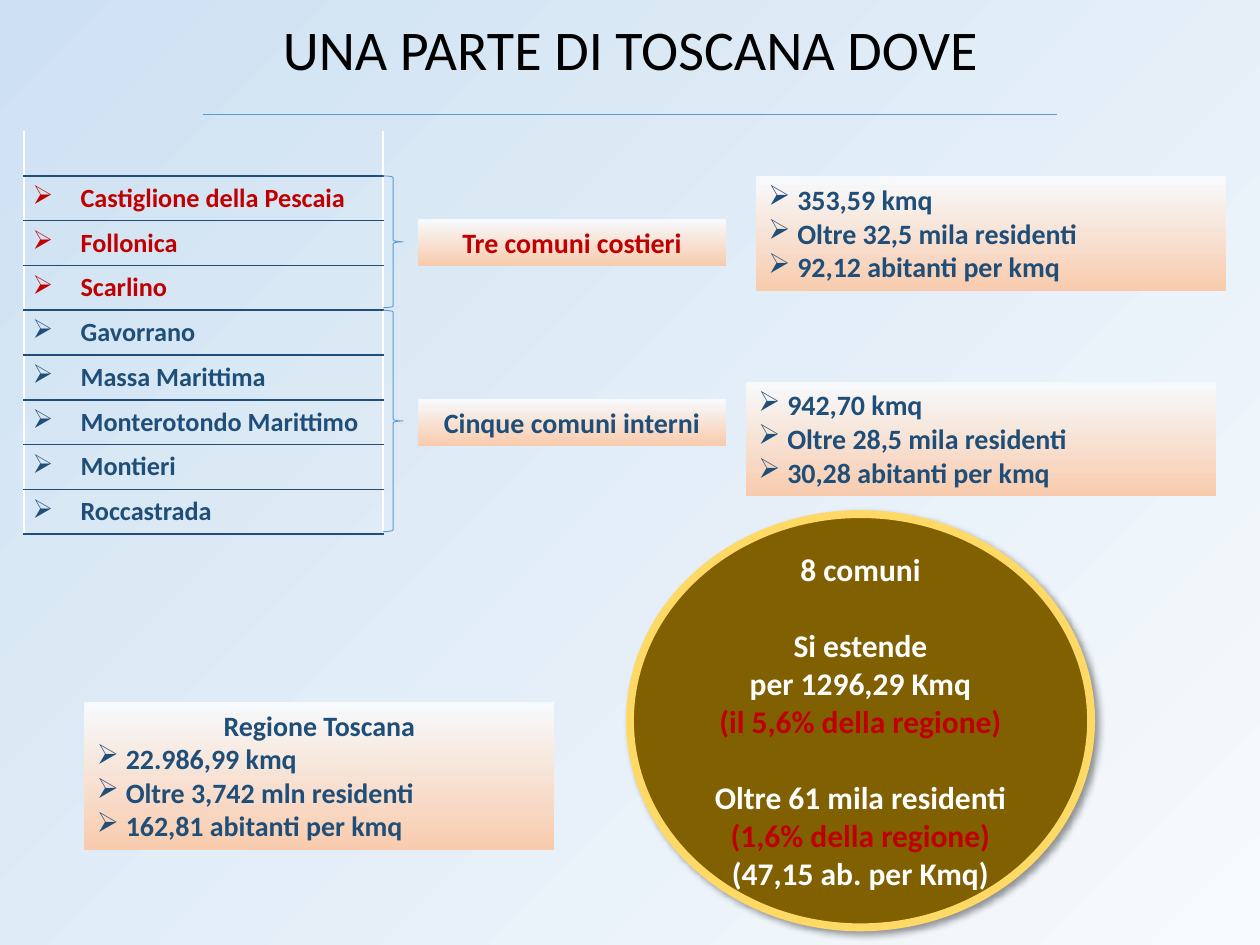
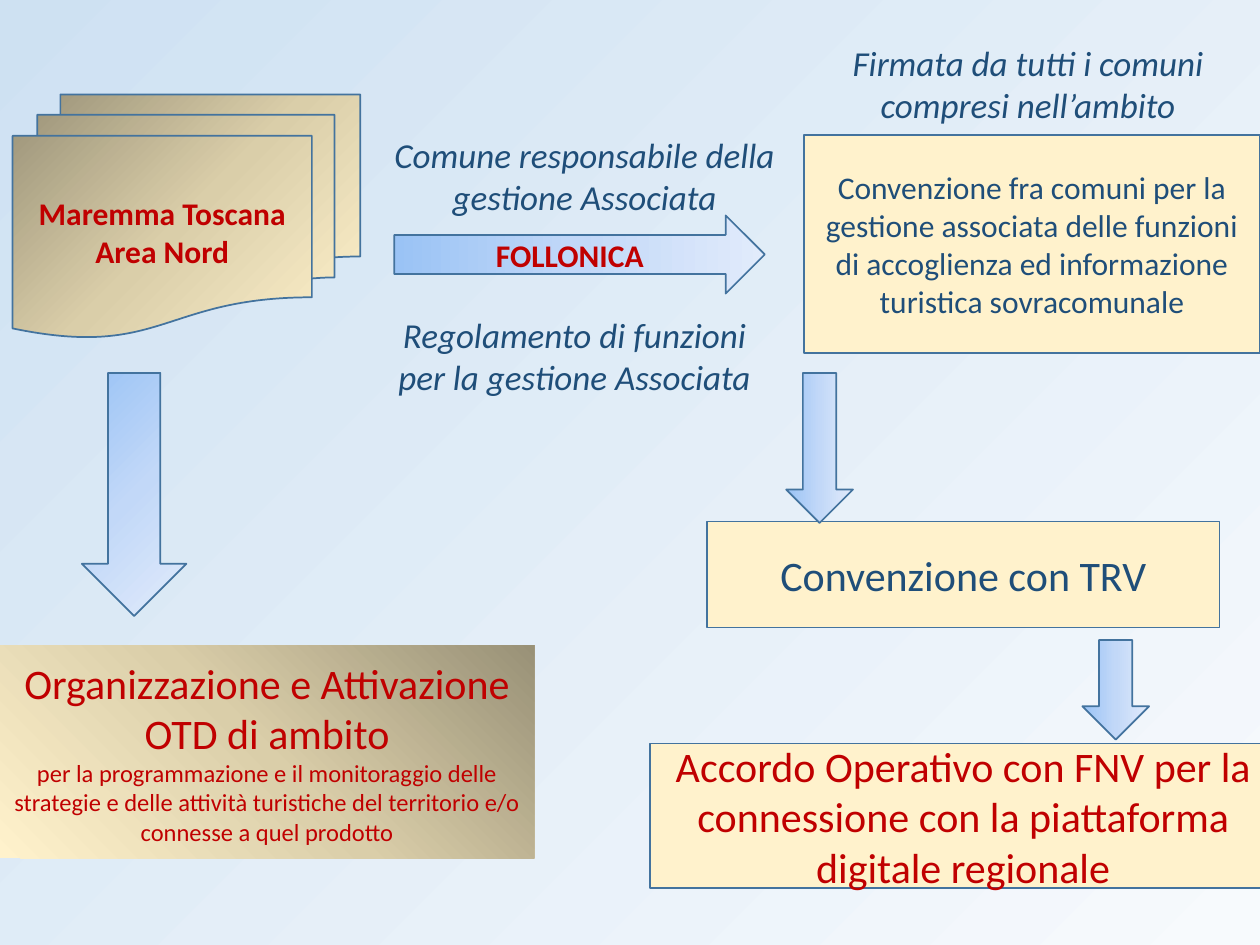
from copy import deepcopy
from dataclasses import dataclass

from lxml.etree import SubElement as Sub
from pptx import Presentation
from pptx.dml.color import RGBColor as Rgb
from pptx.enum.shapes import MSO_CONNECTOR as Link, MSO_SHAPE as Kind
from pptx.enum.text import MSO_ANCHOR as Anchor, MSO_AUTO_SIZE as Fit, PP_ALIGN as Align
from pptx.oxml.ns import qn
from pptx.util import Inches, Pt

HUES = {
    "pale": "F7FAFD", "sky": "CEE1F2", "navy": "1F4E79", "red": "C00000",
    "white": "FFFFFF", "black": "000000", "blue": "5B9BD5", "edge": "43739E",
    "peach": "F8CBAD", "cream": "FFF2CC", "sand": "DACEA9", "khaki": "999177",
    "ice": "9AC3F5", "mist": "C2D8F8", "frost": "E1EBFB",
    "olive": "806000", "gold": "FFD966",
}
FONT = "Calibri"
MARK = "➢"


@dataclass(frozen=True)
class Para:
    text: str
    size: float
    hue: str = "navy"
    bold: bool = False
    slant: bool = False
    dent: float = 0
    gap: float = 0
    pitch: float = 1


@dataclass(frozen=True)
class Blend:
    hues: tuple[str, ...]
    turn: float = 0
    focus: str = ""


@dataclass(frozen=True)
class Box:
    kind: Kind
    at: tuple[float, float, float, float]
    paras: tuple[Para, ...] = ()
    fill: str | Blend | None = None
    line: str | None = None
    width: float = 1
    grow: bool = False
    tight: bool = False
    shade: bool = False


PEACH = Blend(("pale", "peach"), 270)
ICE = Blend(("ice", "mist", "frost"))
ICE_ROUND = Blend(ICE.hues, focus="lb")
EARTH = Blend(("khaki", "sand", "cream"), focus="rb")
EARTH_TOP = Blend(EARTH.hues, focus="lb")


def tint(name: str) -> Rgb:
    return Rgb.from_string(HUES[name])


def blend(fill, root, mix: Blend) -> None:
    fill.gradient()
    fill.gradient_angle = mix.turn
    stops = root.find(".//" + qn("a:gsLst"))
    if len(mix.hues) == 3:
        stop = deepcopy(stops[0])
        stop.set("pos", "50000")
        stops.insert(1, stop)
    for stop, hue in zip(fill.gradient_stops, mix.hues):
        stop.color.rgb = tint(hue)
    if mix.focus:
        grad = stops.getparent()
        grad.remove(grad.find(qn("a:lin")))
        path = Sub(grad, qn("a:path"), path="circle")
        rect = Sub(path, qn("a:fillToRect"))
        for side in "ltrb":
            rect.set(side, "100000" if side in FOCI[mix.focus] else "0")


FOCI = {"lb": "rb", "rb": "lb"}


def write(frame, paras: tuple[Para, ...]) -> None:
    for spot, item in enumerate(paras):
        para = frame.add_paragraph() if spot else frame.paragraphs[0]
        para.text = item.text
        para.alignment = Align.LEFT if item.dent else Align.CENTER
        if item.pitch != 1:
            para.line_spacing = item.pitch
        if item.gap:
            para.space_before = Pt(item.gap)
        if item.dent:
            props = para._p.get_or_add_pPr()
            props.set("marL", str(Inches(item.dent)))
            props.set("indent", str(-Inches(item.dent)))
            Sub(props, qn("a:buChar"), char=MARK)
        font = para.font
        font.name, font.size = FONT, Pt(item.size)
        font.bold, font.italic = item.bold, item.slant
        font.color.rgb = tint(item.hue)


def trim(pad) -> None:
    pad.margin_left = pad.margin_right = Inches(0.07)
    pad.margin_top = pad.margin_bottom = Inches(0.04)


def draw(slide, box: Box) -> None:
    shape = slide.shapes.add_shape(box.kind, *map(Inches, box.at))
    shape.shadow.inherit = False
    if isinstance(box.fill, Blend):
        blend(shape.fill, shape.element.spPr, box.fill)
    elif box.fill:
        shape.fill.solid()
        shape.fill.fore_color.rgb = tint(box.fill)
    else:
        shape.fill.background()
    if box.line:
        shape.line.color.rgb = tint(box.line)
        shape.line.width = Pt(box.width)
    else:
        shape.line.fill.background()
    if box.shade:
        glow = Sub(shape.element.spPr.find(qn("a:effectLst")), qn("a:outerShdw"),
                   blurRad=str(Pt(4)), dist=str(Pt(3)), dir="2700000")
        color = Sub(glow, qn("a:srgbClr"), val=HUES["black"])
        Sub(color, qn("a:alpha"), val="40000")
    if box.paras:
        frame = shape.text_frame
        frame.word_wrap = True
        frame.vertical_anchor = Anchor.TOP if box.grow else Anchor.MIDDLE
        if box.grow:
            frame.auto_size = Fit.SHAPE_TO_FIT_TEXT
        if box.tight:
            trim(frame)
        write(frame, box.paras)


def start(deck):
    slide = deck.slides.add_slide(deck.slide_layouts[6])
    blend(slide.background.fill, slide.element, Blend(("pale", "sky"), 135))
    return slide


TOWNS = ("Castiglione della Pescaia", "Follonica", "Scarlino", "Gavorrano",
         "Massa Marittima", "Monterotondo Marittimo", "Montieri", "Roccastrada")
COAST = 3
LEFT, TOP, WIDE = 0.19, 1.04, 2.85
ROW = 3.2 / (len(TOWNS) + 1)


def rule(cell, side: str, hue: str | None) -> None:
    line = Sub(cell._tc.get_or_add_tcPr(), qn("a:ln" + side), w=str(Pt(1)))
    if hue:
        Sub(Sub(line, qn("a:solidFill")), qn("a:srgbClr"), val=HUES[hue])
    else:
        Sub(line, qn("a:noFill"))


def list_towns(slide) -> None:
    rows = len(TOWNS) + 1
    table = slide.shapes.add_table(
        rows, 1, Inches(LEFT), Inches(TOP), Inches(WIDE), Inches(ROW * rows)).table
    table.first_row = table.horz_banding = False
    for spot, town in enumerate(("",) + TOWNS):
        table.rows[spot].height = Inches(ROW)
        cell = table.cell(spot, 0)
        trim(cell)
        cell.vertical_anchor = Anchor.MIDDLE
        for side, hue in (("L", "white"), ("R", "white"),
                          ("T", "navy" if spot else None), ("B", "navy")):
            rule(cell, side, hue)
        cell.fill.background()
        if town:
            hue = "red" if spot <= COAST else "navy"
            write(cell.text_frame, (Para(town, 15, hue, True, dent=0.38),))
        else:
            cell.text_frame.paragraphs[0].font.size = Pt(12)


def brace(first: int, count: int) -> Box:
    return Box(Kind.RIGHT_BRACE, (LEFT + WIDE, TOP + ROW * first, 0.16, ROW * count - 0.02),
               line="blue", width=0.5)


def label(top: float, text: str, hue: str) -> Box:
    return Box(Kind.RECTANGLE, (3.32, top, 2.44, 0.37), (Para(text, 16, hue, True),),
               PEACH, grow=True)


def facts(left: float, top: float, high: float, lines: tuple[str, ...], head: str = "") -> Box:
    paras = tuple(Para(line, 16, bold=True, dent=0.23) for line in lines)
    if head:
        paras = (Para(head, 16, bold=True),) + paras
    return Box(Kind.RECTANGLE, (left, top, 3.73, high), paras, PEACH, grow=True)


def total(text: str, hue: str = "white", gap: float = 0) -> Para:
    return Para(text, 18, hue, True, gap=gap)


def show_towns(deck) -> None:
    slide = start(deck)
    list_towns(slide)
    title = slide.shapes.add_textbox(*map(Inches, (0.01, 0.13, 9.99, 1.07)))
    title.text_frame.word_wrap = True
    write(title.text_frame, (Para("UNA PARTE DI TOSCANA DOVE", 32, "black", pitch=0.9),))
    line = slide.shapes.add_connector(
        Link.STRAIGHT, *map(Inches, (1.61, 0.91, 8.39, 0.91)))
    line.line.color.rgb = tint("blue")
    line.line.width = Pt(0.5)
    Sub(line.element.spPr, qn("a:effectLst"))
    sums = (
        total("8 comuni"),
        total("Si estende", gap=22),
        total("per 1296,29 Kmq"),
        total("(il 5,6% della regione)", "red"),
        total("Oltre 61 mila residenti", gap=22),
        total("(1,6% della regione)", "red"),
        total("(47,15 ab. per Kmq)"),
    )
    for box in (
        Box(Kind.OVAL, (5, 4.08, 3.66, 3.28), sums, "olive", "gold", 4.5,
            tight=True, shade=True),
        facts(0.67, 5.57, 1.18, ("22.986,99 kmq", "Oltre 3,742 mln residenti",
                                 "162,81 abitanti per kmq"), "Regione Toscana"),
        brace(1, COAST),
        brace(1 + COAST, len(TOWNS) - COAST),
        label(1.74, "Tre comuni costieri", "red"),
        label(3.17, "Cinque comuni interni", "navy"),
        facts(6, 1.4, 0.91, ("353,59 kmq", "Oltre 32,5 mila residenti",
                             "92,12 abitanti per kmq")),
        facts(5.92, 3.03, 0.91, ("942,70 kmq", "Oltre 28,5 mila residenti",
                                 "30,28 abitanti per kmq")),
    ):
        draw(slide, box)


def step(at: tuple[float, float, float, float], text: str, size: float,
         hue: str = "navy") -> Box:
    return Box(Kind.FLOWCHART_PROCESS, at, (Para(text, size, hue),), "cream", "edge")


def arrow(at: tuple[float, float, float, float], mix: Blend = ICE) -> Box:
    return Box(Kind.DOWN_ARROW, at, fill=mix, line="edge")


def note(left: float, top: float, text: str) -> Box:
    return Box(Kind.FLOWCHART_PROCESS, (left, top, 3.24, 0.76),
               (Para(text, 20, slant=True),))


def show_flow(deck) -> None:
    slide = start(deck)
    aims = (
        Para("Organizzazione e Attivazione", 24, "red"),
        Para("OTD di ambito", 24, "red"),
        Para("per la programmazione e il monitoraggio delle strategie e delle attività "
             "turistiche del territorio e/o connesse a quel prodotto", 14, "red"),
    )
    for box in (
        Box(Kind.RIGHT_ARROW, (3.13, 1.71, 2.94, 0.62),
            (Para("FOLLONICA", 18, "red", True),), ICE, "edge"),
        Box(Kind.FLOWCHART_MULTIDOCUMENT, (0.1, 0.75, 2.76, 1.93),
            (Para("Maremma Toscana Area Nord", 18, "red", True),), EARTH_TOP, "edge"),
        step((6.38, 1.07, 3.62, 1.73),
             "Convenzione fra comuni per la gestione associata delle funzioni "
             "di accoglienza ed informazione turistica sovracomunale", 18),
        step((5.61, 4.14, 4.07, 0.84), "Convenzione con TRV", 24),
        step((5.16, 5.9, 4.97, 1.15), "Accordo Operativo con FNV per la connessione "
             "con la piattaforma digitale regionale", 24, "red"),
        arrow((6.24, 2.96, 0.53, 1.19)),
        arrow((8.59, 5.08, 0.53, 0.79)),
        arrow((0.65, 2.96, 0.83, 1.93), ICE_ROUND),
        Box(Kind.FLOWCHART_PROCESS, (0, 5.12, 4.24, 1.69), aims, EARTH),
        note(3.02, 1.01, "Comune responsabile della gestione Associata"),
        note(6.54, 0.28, "Firmata da tutti i comuni compresi nell’ambito"),
        note(2.94, 2.44, "Regolamento di funzioni per la gestione Associata"),
    ):
        draw(slide, box)


def main() -> None:
    deck = Presentation()
    deck.slide_width, deck.slide_height = Inches(10), Inches(7.5)
    show_towns(deck)
    show_flow(deck)
    deck.save("out.pptx")


if __name__ == "__main__":
    main()
